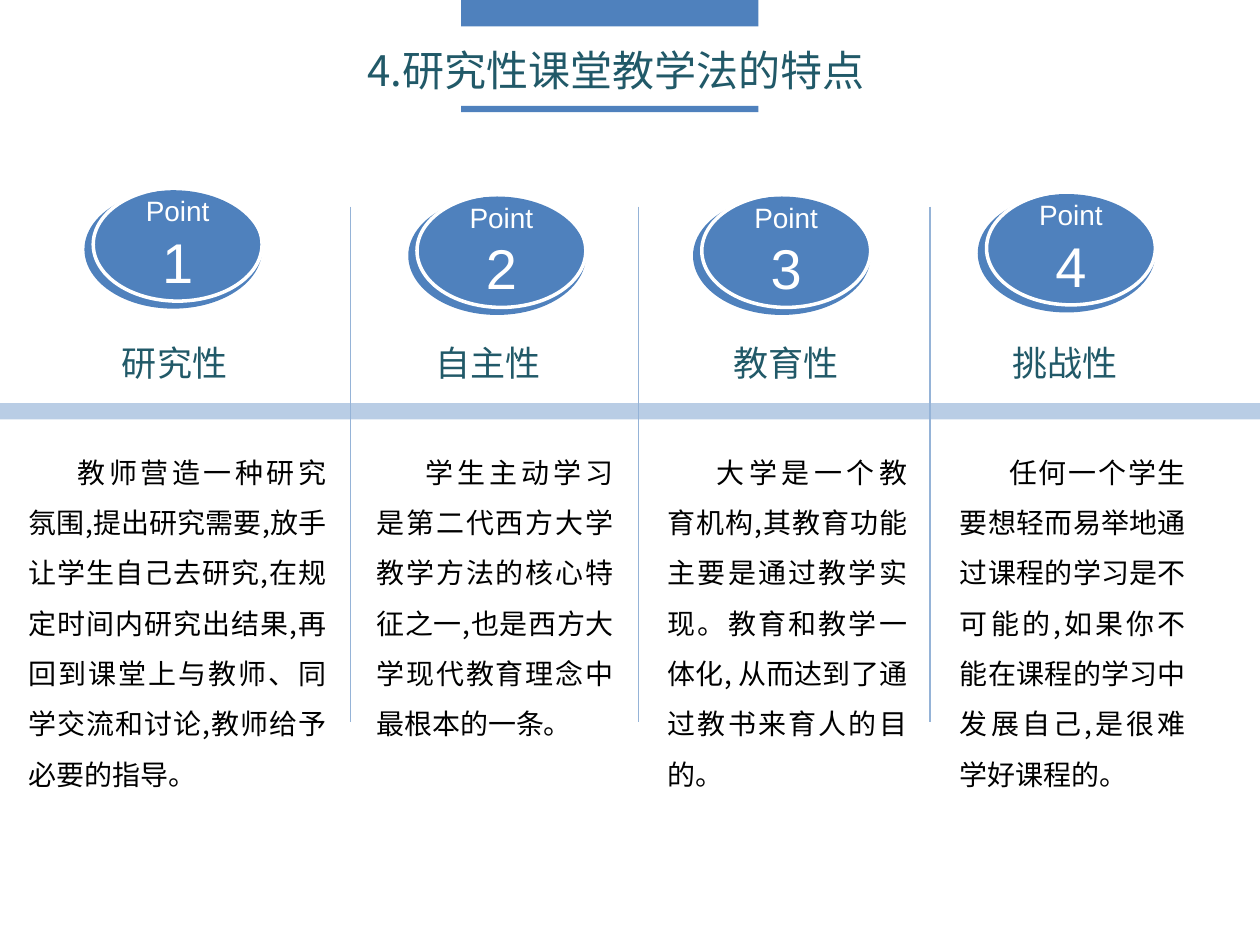
from lxml import etree
from pptx import Presentation
from pptx.dml.color import RGBColor
from pptx.enum.shapes import MSO_CONNECTOR, MSO_SHAPE
from pptx.enum.text import MSO_ANCHOR, MSO_AUTO_SIZE, PP_ALIGN
from pptx.oxml.ns import qn
from pptx.util import Inches, Pt

RECT, OVAL = MSO_SHAPE.RECTANGLE, MSO_SHAPE.OVAL
STRAIGHT = MSO_CONNECTOR.STRAIGHT
MIDDLE, GROW = MSO_ANCHOR.MIDDLE, MSO_AUTO_SIZE.SHAPE_TO_FIT_TEXT
CENTER, JUSTIFY = PP_ALIGN.CENTER, PP_ALIGN.JUSTIFY


def color(code):
    return RGBColor.from_string(code)


def write(par, text, size=16, font="Noto Sans CJK SC", ink="000000",
          align=None, indent=0, spacing=None):
    """Add one formatted run to a paragraph."""
    if align is not None:
        par.alignment = align
    if spacing:
        par.line_spacing = spacing
    if indent:
        par._p.get_or_add_pPr().set("indent", str(Inches(indent)))
    run = par.add_run()
    run.text = text
    run.font.size = Pt(size)
    run.font.name = font
    run.font.color.rgb = color(ink)
    etree.SubElement(run._r.get_or_add_rPr(), qn("a:ea"), typeface=font)


class Board:
    blue, pale, rule = "4F81BD", "B9CDE5", "95B3D7"
    teal, white = "215968", "FFFFFF"

    def __init__(self, slide):
        self.slide = slide

    def shape(self, kind, x, y, w, h, fill=None, line=None):
        item = self.slide.shapes.add_shape(
            kind, Inches(x), Inches(y), Inches(w), Inches(h))
        item.shadow.inherit = False
        if fill:
            item.fill.solid()
            item.fill.fore_color.rgb = color(fill)
        else:
            item.fill.background()
        if line:
            item.line.color.rgb = color(line)
            item.line.width = Pt(2)
        else:
            item.line.fill.background()
        return item

    def divider(self, x, top=1.64, bottom=5.73):
        item = self.slide.shapes.add_connector(
            STRAIGHT, Inches(x), Inches(top), Inches(x), Inches(bottom))
        item.line.color.rgb = color(self.rule)
        item.line.width = Pt(0.75)
        etree.SubElement(item._element.spPr, qn("a:effectLst"))

    def text(self, text, x, y, w, h, right=0.1, **style):
        box = self.slide.shapes.add_textbox(
            Inches(x), Inches(y), Inches(w), Inches(h))
        frame = box.text_frame
        frame.word_wrap = True
        frame.auto_size = GROW
        frame.margin_right = Inches(right)
        write(frame.paragraphs[0], text, **style)

    def badge(self, number, x, y):
        """Draw a numbered oval over its offset backing oval."""
        self.shape(OVAL, x, y, 1.41, 0.94, fill=self.blue)
        front = self.shape(OVAL, x + 0.07, y - 0.02, 1.34, 0.9,
                           line=self.white)
        frame = front.text_frame
        frame.word_wrap = True
        frame.vertical_anchor = MIDDLE
        par = frame.paragraphs[0]
        style = {"font": "Arial", "ink": self.white, "align": CENTER}
        write(par, "Point", size=16, **style)
        par.add_line_break()
        write(par, str(number), size=32, **style)


# badge left, badge top, heading left, heading, body left, width, height, body
POINTS = [
    (0.67, 1.51, 0.87, "研究性", 0.13, 2.56, 2.93,
     "教师营造一种研究氛围,提出研究需要,放手让学生自己去研究,"
     "在规定时间内研究出结果,再回到课堂上与教师、同学交流和讨论,"
     "教师给予必要的指导。"),
    (3.24, 1.56, 3.36, "自主性", 2.89, 2.08, 2.52,
     "学生主动学习是第二代西方大学教学方法的核心特征之一,"
     "也是西方大学现代教育理念中最根本的一条。"),
    (5.5, 1.56, 5.72, "教育性", 5.2, 2.1, 2.93,
     "大学是一个教育机构,其教育功能主要是通过教学实现。"
     "教育和教学一体化, 从而达到了通过教书来育人的目的。"),
    (7.76, 1.54, 7.94, "挑战性", 7.52, 1.99, 2.93,
     "任何一个学生要想轻而易举地通过课程的学习是不可能的,"
     "如果你不能在课程的学习中发展自己,是很难学好课程的。"),
]


def main():
    deck = Presentation()
    deck.slide_width, deck.slide_height = Inches(10), Inches(7.5)
    board = Board(deck.slides.add_slide(deck.slide_layouts[6]))

    board.shape(RECT, 0, 3.2, 10, 0.13, fill=board.pale)
    for x in (2.78, 5.07, 7.38):
        board.divider(x)
    for y, h in ((0, 0.21), (0.84, 0.05)):
        board.shape(RECT, 3.66, y, 2.36, h, fill=board.blue)
    board.text("4.研究性课堂教学法的特点", 2.82, 0.3, 5.7, 0.51,
               size=24, ink=board.teal)

    for number, point in enumerate(POINTS, 1):
        left, top, head_x, head, body_x, width, height, body = point
        board.badge(number, left, top)
        board.text(head, head_x, 2.66, 1.04, 0.44, right=0,
                   size=20, ink=board.teal)
        board.text(body, body_x, 3.43, width, height,
                   align=JUSTIFY, indent=0.39, spacing=1.5)

    deck.save("out.pptx")


if __name__ == "__main__":
    main()
